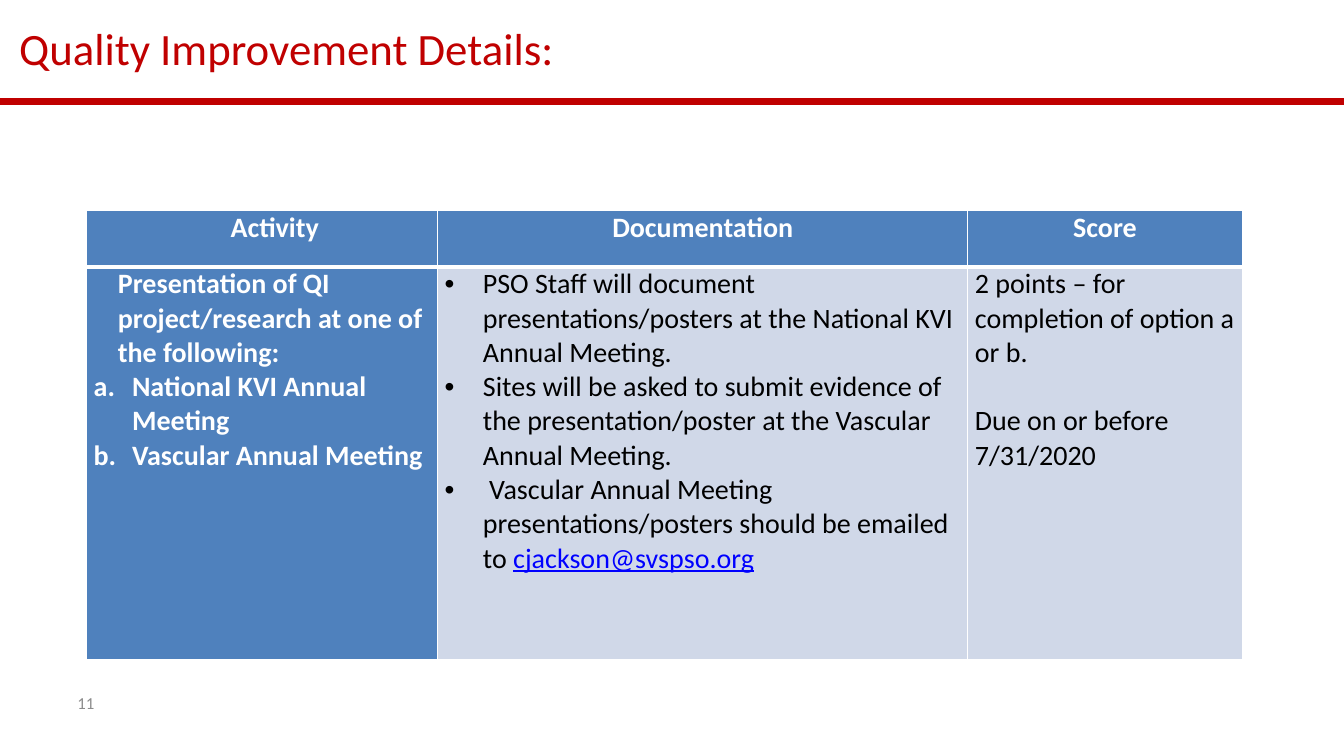
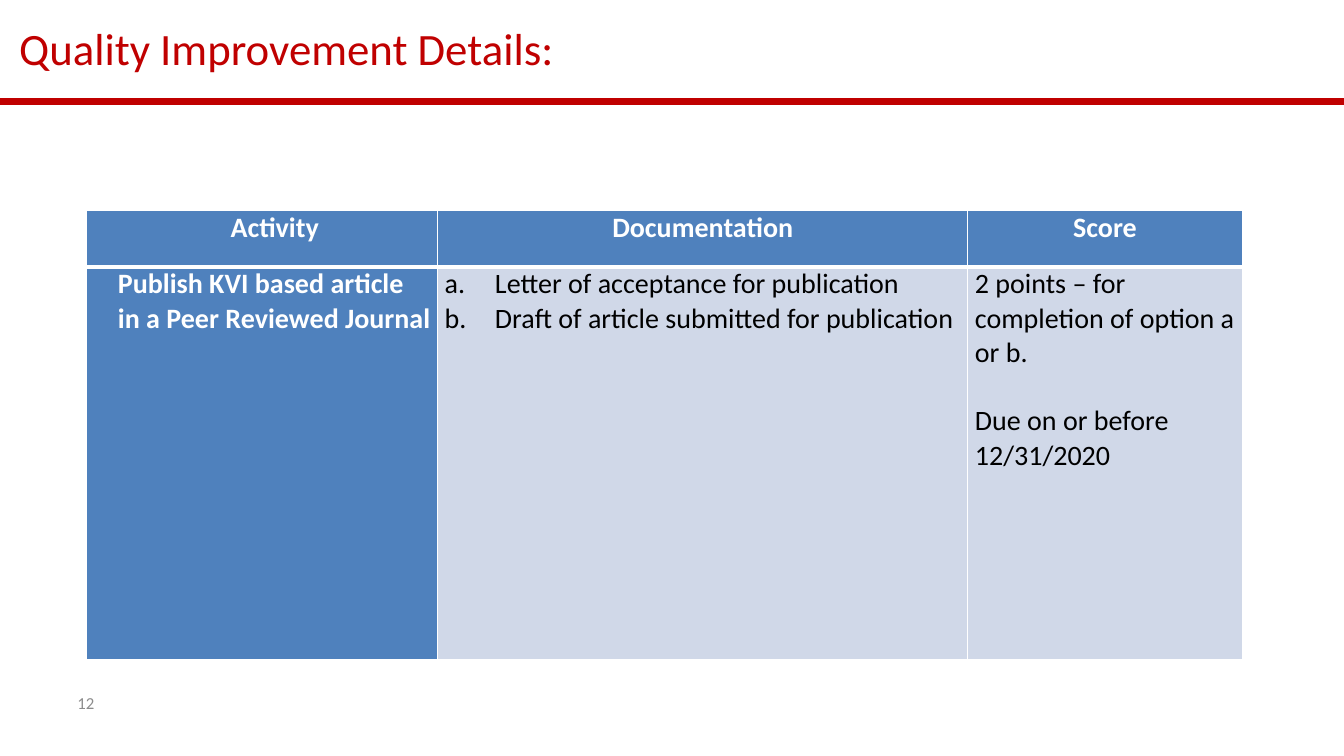
from dataclasses import dataclass

from lxml import etree
from pptx import Presentation
from pptx.dml.color import RGBColor
from pptx.enum.shapes import MSO_CONNECTOR
from pptx.enum.text import MSO_ANCHOR, MSO_AUTO_SIZE, PP_ALIGN
from pptx.oxml.ns import qn
from pptx.util import Inches, Pt

RED = RGBColor(0xC0, 0x00, 0x00)
BLUE = RGBColor(0x4F, 0x81, 0xBD)
PALE_BLUE = RGBColor(0xD0, 0xD8, 0xE8)
LINK_BLUE = RGBColor(0x00, 0x00, 0xFF)
GRAY = RGBColor(0x8C, 0x8C, 0x8C)
WHITE = RGBColor(0xFF, 0xFF, 0xFF)
BLACK = RGBColor(0x00, 0x00, 0x00)

LEFT, CENTER = PP_ALIGN.LEFT, PP_ALIGN.CENTER
MIDDLE = MSO_ANCHOR.MIDDLE
NO_AUTOFIT = MSO_AUTO_SIZE.NONE
STRAIGHT = MSO_CONNECTOR.STRAIGHT

FONT = "Calibri"
TITLE = "Quality Improvement Details:"
EMAIL = "cjackson@svspso.org"
SLIDE_WIDTH, SLIDE_HEIGHT = 13.33, 7.5
TITLE_BOX = (0.09, 0.1, 9.75, 0.74)
TABLE_BOX = (0.86, 2.09, 11.46, 4.45)
NUMBER_BOX = (0.67, 6.77, 3, 0.4)
RULE_TOP = 1.01
COLUMN_WIDTHS = (3.48, 5.26, 2.72)
ROW_HEIGHTS = (0.56, 3.89)
THIN, THICK = 1, 3


@dataclass
class Line:
    """One paragraph of a table cell, with lengths in inches and points."""
    text: str
    indent: float = 0
    marker: str = ""
    align: int = LEFT
    space_before: float = 0


def bullet(text):
    """Return a bulleted line."""
    return Line(text, 0.38, "•")


def lettered(text, indent):
    """Return a line numbered a., b., c."""
    return Line(text, indent, "letter")


def score(due_date):
    """Return the lines of a score cell."""
    return [Line("2 points – for completion of option a or b."),
            Line(f"Due on or before {due_date}", space_before=24.4)]


HEADER = [[Line("Activity", 0.25, align=CENTER)],
          [Line("Documentation", align=CENTER)],
          [Line("Score", align=CENTER)]]

PRESENTATION_ROW = [
    [Line("Presentation of QI project/research at one of the following:", 0.24),
     lettered("National KVI Annual Meeting", 0.38),
     lettered("Vascular Annual Meeting", 0.38)],
    [bullet("PSO Staff will document presentations/posters at the National KVI "
            "Annual Meeting."),
     bullet("Sites will be asked to submit evidence of the presentation/poster "
            "at the Vascular Annual Meeting."),
     bullet(" Vascular Annual Meeting presentations/posters should be emailed "
            f"to {EMAIL}")],
    score("7/31/2020"),
]

ARTICLE_ROW = [
    [Line("Publish KVI based article in a Peer Reviewed Journal", 0.24)],
    [lettered("Letter of acceptance for publication", 0.5),
     lettered("Draft of article submitted for publication", 0.5)],
    score("12/31/2020"),
]


def style_span(span, size, color, bold=False):
    """Set the font of one run."""
    span.font.name = FONT
    span.font.size = Pt(size)
    span.font.bold = bold
    span.font.color.rgb = color


def set_indent(para, line):
    """Set the indent and the marker of a paragraph."""
    properties = para._p.get_or_add_pPr()
    properties.set("marL", str(Inches(line.indent)))
    properties.set("indent", str(-Inches(line.indent) if line.marker else 0))
    if line.marker == "letter":
        etree.SubElement(properties, qn("a:buAutoNum"), type="alphaLcPeriod")
    elif line.marker:
        etree.SubElement(properties, qn("a:buFont"), typeface="Arial")
        etree.SubElement(properties, qn("a:buChar"), char=line.marker)


def fill_cell_text(cell, lines, color, bold):
    """Write the lines of a cell."""
    frame = cell.text_frame
    frame.text = "\n".join(line.text for line in lines)
    for para, line in zip(frame.paragraphs, lines):
        para.alignment = line.align
        if line.space_before:
            para.space_before = Pt(line.space_before)
        set_indent(para, line)
        if line.text.endswith(EMAIL):
            para.runs[0].text = line.text.removesuffix(EMAIL)
            para.add_run().text = EMAIL
        for span in para.runs:
            is_email = span.text == EMAIL
            style_span(span, 20, LINK_BLUE if is_email else color, bold)
            if is_email:
                span.font.underline = True


def set_borders(cell, top, bottom):
    """Draw white borders around a cell."""
    properties = cell._tc.get_or_add_tcPr()
    widths = {"lnL": THIN, "lnR": THIN, "lnT": top, "lnB": bottom}
    for side, width in widths.items():
        border = etree.SubElement(properties, qn(f"a:{side}"), w=str(Pt(width)))
        fill = etree.SubElement(border, qn("a:solidFill"))
        etree.SubElement(fill, qn("a:srgbClr"), val=str(WHITE))


def add_details_table(page, box, body_row):
    """Add the table of activity, documentation and score."""
    rows = [HEADER, body_row]
    frame = page.shapes.add_table(len(rows), len(HEADER), *map(Inches, box))
    table = frame.table
    for column, width in zip(table.columns, COLUMN_WIDTHS):
        column.width = Inches(width)
    for row, height in zip(table.rows, ROW_HEIGHTS):
        row.height = Inches(height)
    for row_index, row in enumerate(rows):
        is_header = row_index == 0
        for column_index, lines in enumerate(row):
            cell = table.cell(row_index, column_index)
            strong = is_header or column_index == 0
            cell.margin_left = cell.margin_right = Inches(0.07)
            cell.margin_top = cell.margin_bottom = 0
            set_borders(cell, *((THIN, THICK) if is_header else (THICK, THIN)))
            cell.fill.solid()
            cell.fill.fore_color.rgb = BLUE if strong else PALE_BLUE
            fill_cell_text(cell, lines, WHITE if strong else BLACK, strong)


def add_rule(page):
    """Draw the red rule under the title."""
    top = Inches(RULE_TOP)
    rule = page.shapes.add_connector(STRAIGHT, 0, top, Inches(SLIDE_WIDTH), top)
    rule.line.color.rgb = RED
    rule.line.width = Pt(5)
    etree.SubElement(rule._element.spPr, qn("a:effectLst"))


def fill_box(shape, text, size, color):
    """Write one left-aligned, vertically centred line in a box."""
    frame = shape.text_frame
    frame.text = text
    frame.word_wrap = True
    frame.auto_size = NO_AUTOFIT
    frame.vertical_anchor = MIDDLE
    para = frame.paragraphs[0]
    para.alignment = LEFT
    style_span(para.runs[0], size, color)


def add_title(page, box):
    """Place and format the title."""
    title = page.shapes.title
    title.left, title.top, title.width, title.height = map(Inches, box)
    fill_box(title, TITLE, 32, RED)


def add_details_slide(deck, number, body_row):
    """Add one slide with title, rule, table and page number."""
    page = deck.slides.add_slide(deck.slide_layouts.get_by_name("Title Only"))
    add_rule(page)
    add_title(page, TITLE_BOX)
    add_details_table(page, TABLE_BOX, body_row)
    number_box = page.shapes.add_textbox(*map(Inches, NUMBER_BOX))
    fill_box(number_box, str(number), 12, GRAY)


def main():
    """Build and save the deck."""
    deck = Presentation()
    deck.slide_width = Inches(SLIDE_WIDTH)
    deck.slide_height = Inches(SLIDE_HEIGHT)
    for number, body_row in enumerate((PRESENTATION_ROW, ARTICLE_ROW), start=11):
        add_details_slide(deck, number, body_row)
    deck.save("out.pptx")


if __name__ == "__main__":
    main()
